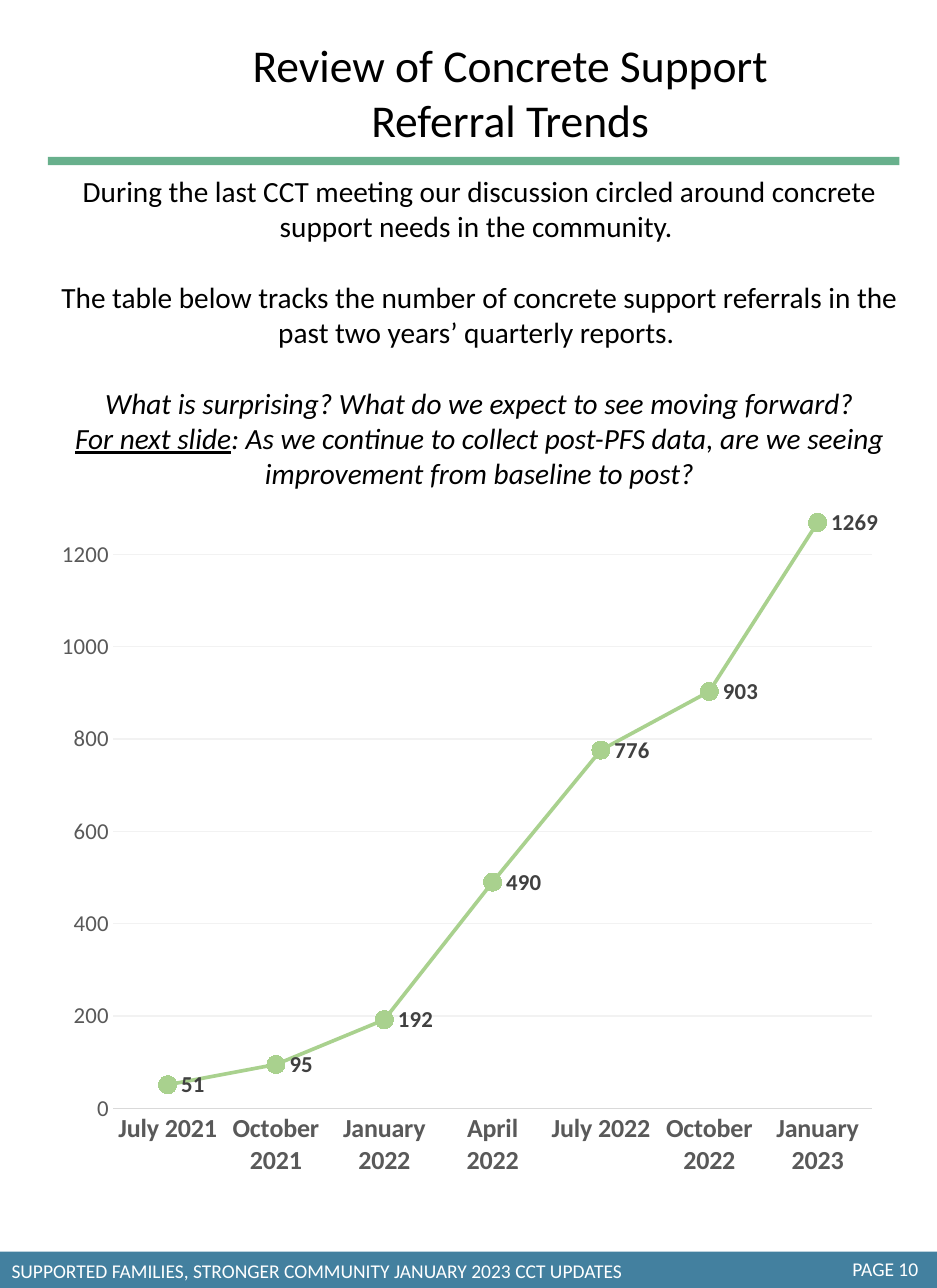
from pptx import Presentation
from pptx import util as u
from pptx.chart.data import CategoryChartData
from pptx.dml.color import RGBColor
from pptx.enum import chart as ch, shapes, text
from pptx.oxml import ns, parse_xml

WHITE = RGBColor(0xFF, 0xFF, 0xFF)
BLACK = RGBColor(0, 0, 0)
BLUE = RGBColor(0x43, 0x80, 0x9F)
GREEN = RGBColor(0x68, 0xB0, 0x8C)
LIGHT_GREEN = RGBColor(0xA9, 0xD1, 0x8E)
DARK_GRAY = RGBColor(0x40, 0x40, 0x40)
GRAY = RGBColor(0x59, 0x59, 0x59)
AXIS_GRAY = RGBColor(0xD9, 0xD9, 0xD9)
GRID_GRAY = RGBColor(0xF2, 0xF2, 0xF2)

COLS, ROWS = 80, 110
LINE_GAP = 22

REFERRALS = {
    "July 2021": 51,
    "October 2021": 95,
    "January 2022": 192,
    "April 2022": 490,
    "July 2022": 776,
    "October 2022": 903,
    "January 2023": 1269,
}

# Each paragraph: space before in points, then runs of (wording, italic, underline)
DISCUSSION = [
    (0, [("During the last CCT meeting our discussion circled around concrete "
          "support needs in the community. ", False, False)]),
    (LINE_GAP, [("The table below tracks the number of concrete support referrals "
                 "in the past two years’ quarterly reports. ", False, False)]),
    (LINE_GAP, [("What is surprising? What do we expect to see moving forward?",
                 True, False)]),
    (0, [("For next slide", True, True),
         (": As we continue to collect post-PFS data, are we seeing "
          "improvement from baseline to post?", True, False)]),
]


class Page:
    """Places elements on a slide by grid columns and rows."""

    font = "Calibri"

    def __init__(self, prs):
        self.slide = prs.slides.add_slide(prs.slide_layouts[6])
        self.col = prs.slide_width / COLS
        self.row = prs.slide_height / ROWS

    def box(self, x, y, w, h):
        return (round(x * self.col), round(y * self.row),
                round(w * self.col), round(h * self.row))

    def style(self, font, size, color, bold=False):
        font.name = self.font
        font.size = u.Pt(size)
        font.bold = bold
        font.color.rgb = color

    def bar(self, place, color):
        sp = self.slide.shapes.add_shape(shapes.MSO_SHAPE.RECTANGLE, *self.box(*place))
        sp.shadow.inherit = False
        sp.fill.solid()
        sp.fill.fore_color.rgb = color
        sp.line.fill.background()

    def text(self, place, paragraphs, size, color=BLACK, centered=True):
        """Centred text wraps; other text stays on one line."""
        tf = self.slide.shapes.add_textbox(*self.box(*place)).text_frame
        tf.word_wrap = centered
        tf.auto_size = text.MSO_AUTO_SIZE.SHAPE_TO_FIT_TEXT
        for i, (gap, runs) in enumerate(paragraphs):
            p = tf.add_paragraph() if i else tf.paragraphs[0]
            p.alignment = text.PP_ALIGN.CENTER if centered else text.PP_ALIGN.LEFT
            p.space_before = u.Pt(gap)
            for wording, italic, underline in runs:
                r = p.add_run()
                r.text = wording
                self.style(r.font, size, color)
                r.font.italic = italic
                r.font.underline = underline

    def label(self, place, wording, size, color=BLACK, centered=True):
        self.text(place, [(0, [(wording, False, False)])], size, color, centered)

    def line_chart(self, place, values, top, step, plot):
        data = CategoryChartData()
        data.categories = list(values)
        data.add_series("Series 1", list(values.values()))
        chart = self.slide.shapes.add_chart(
            ch.XL_CHART_TYPE.LINE_MARKERS, *self.box(*place), data).chart
        chart.has_title = False
        chart.has_legend = False
        self.style(chart.font, 10, BLACK)
        self.axes(chart, top, step)
        self.series(chart.plots[0])
        self.plot_area(chart, plot)

    def axes(self, chart, top, step):
        cat, val = chart.category_axis, chart.value_axis
        for axis, size, bold in ((cat, 16, True), (val, 14, False)):
            axis.major_tick_mark = axis.minor_tick_mark = ch.XL_TICK_MARK.NONE
            self.style(axis.tick_labels.font, size, GRAY, bold)
        val.minimum_scale, val.maximum_scale = 0, top
        val.major_unit = step
        val.has_major_gridlines = True
        val.format.line.fill.background()
        for line, color in ((cat.format.line, AXIS_GRAY),
                            (val.major_gridlines.format.line, GRID_GRAY)):
            line.color.rgb = color
            line.width = u.Pt(0.75)

    def series(self, plot):
        plot.vary_by_categories = False
        s = plot.series[0]
        s.smooth = False
        s.format.line.color.rgb = LIGHT_GREEN
        s.format.line.width = u.Pt(2.25)
        s.marker.style = ch.XL_MARKER_STYLE.CIRCLE
        s.marker.size = 11
        s.marker.format.fill.solid()
        s.marker.format.fill.fore_color.rgb = LIGHT_GREEN
        s.marker.format.line.fill.background()
        labels = s.data_labels
        labels.show_value = True
        labels.position = ch.XL_LABEL_POSITION.RIGHT
        self.style(labels.font, 14, DARK_GRAY, True)

    def plot_area(self, chart, plot):
        """Fix the inner plot area, given as shares of the chart."""
        area = chart.element.find(".//" + ns.qn("c:plotArea"))
        for old in area.findall(ns.qn("c:layout")):
            area.remove(old)
        modes = '<c:xMode val="edge"/><c:yMode val="edge"/>'
        sizes = "".join(f'<c:{k} val="{v}"/>' for k, v in zip("xywh", plot))
        area.insert(0, parse_xml(
            f'<c:layout {ns.nsdecls("c")}><c:manualLayout>'
            f'<c:layoutTarget val="inner"/>{modes}{sizes}'
            '</c:manualLayout></c:layout>'))


def main():
    prs = Presentation()
    prs.slide_width, prs.slide_height = u.Inches(8), u.Inches(11)
    page = Page(prs)
    page.bar((0, 106.9, COLS, 3.1), BLUE)
    page.label((71.8, 106.9, 8.2, 3), "PAGE 10", 12, WHITE, centered=False)
    page.line_chart((4.1, 40.9, 71.7, 61.1), REFERRALS, top=1300, step=200,
                    plot=(0.078, 0.041, 0.903, 0.839))
    page.label((14.1, 2.7, 58.9, 10.4), "Review of Concrete Support Referral Trends", 28)
    page.bar((4.1, 13.4, 72.7, 0.7), GREEN)
    page.label((0, 107, 55.1, 3),
               "SUPPORTED FAMILIES, STRONGER COMMUNITY JANUARY 2023 CCT UPDATES",
               12, WHITE, centered=False)
    page.text((4.1, 14.3, 73.7, 28.3), DISCUSSION, 18)
    prs.save("out.pptx")


if __name__ == "__main__":
    main()
